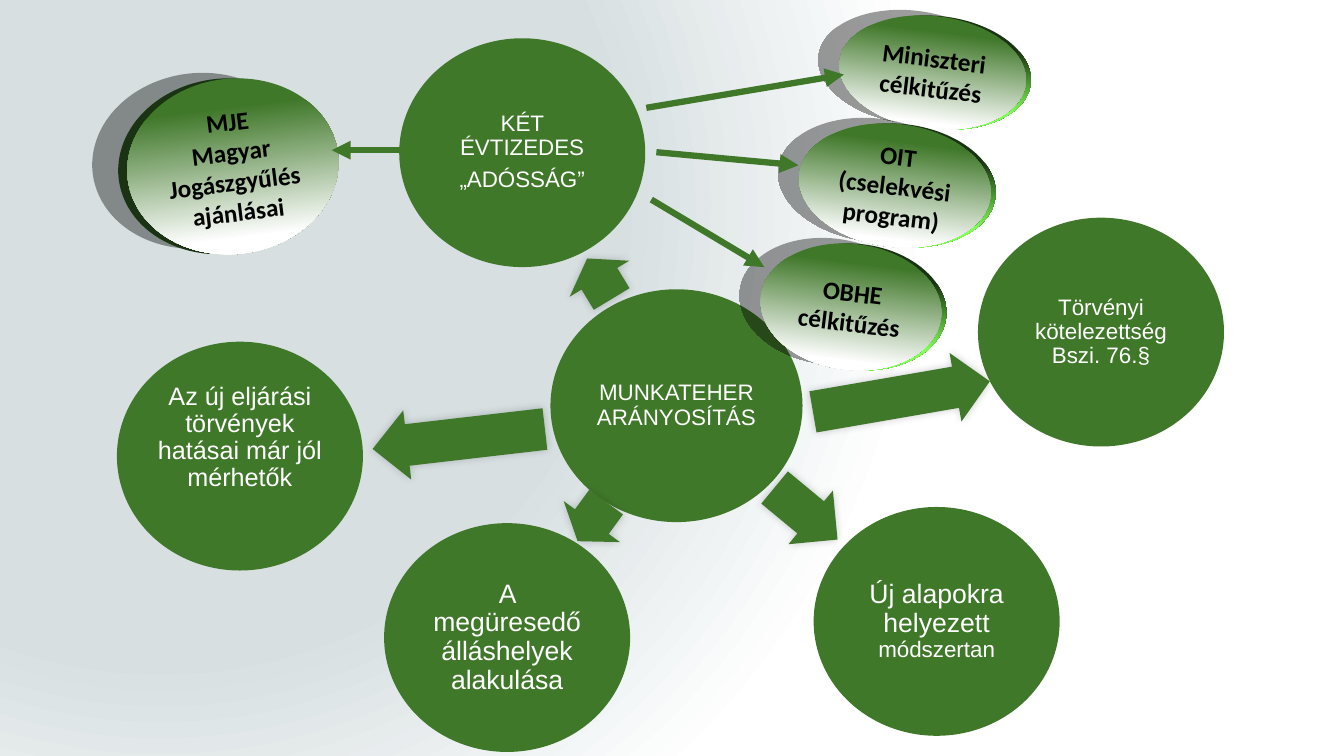
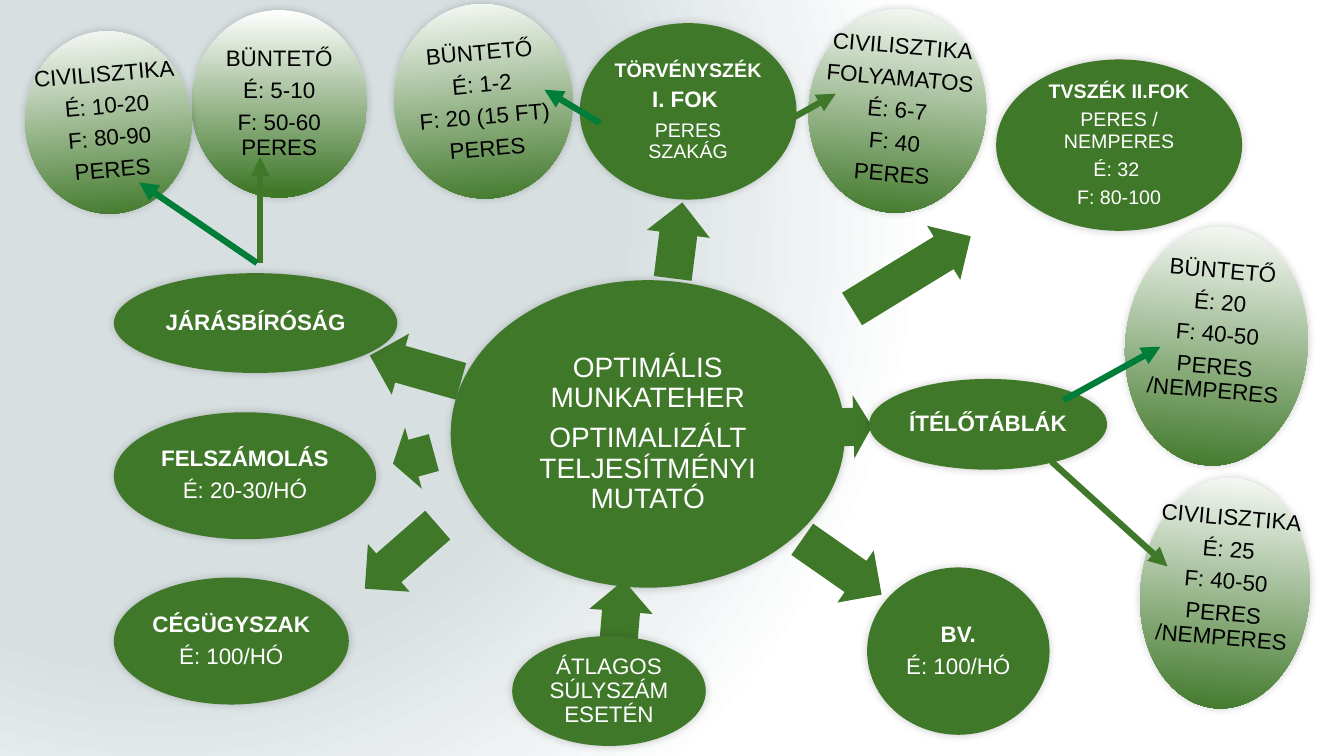
from pptx import Presentation
from pptx.dml.color import RGBColor
from pptx.enum.shapes import MSO_CONNECTOR, MSO_SHAPE
from pptx.enum.text import MSO_ANCHOR, PP_ALIGN
from pptx.oxml import parse_xml
from pptx.oxml.ns import nsdecls, qn
from pptx.util import Inches, Pt

ELLIPSE, ARROW = MSO_SHAPE.OVAL, MSO_SHAPE.RIGHT_ARROW
STRAIGHT = MSO_CONNECTOR.STRAIGHT
MIDDLE, CENTER = MSO_ANCHOR.MIDDLE, PP_ALIGN.CENTER

GREEN = RGBColor(0x40, 0x78, 0x2A)
TEAL = RGBColor(0x00, 0x7E, 0x39)
MIST = RGBColor(0xD7, 0xDF, 0xE1)
RIM_DARK = RGBColor(0x1A, 0x33, 0x12)
RIM_LIGHT = RGBColor(0x80, 0xFF, 0x55)
WHITE = RGBColor(0xFF, 0xFF, 0xFF)
BLACK = RGBColor(0, 0, 0)

SOFT_SHADOW = (20, 6, 0, 45)    # opacity %, blur pt, distance pt, direction
CAST_SHADOW = (38, 0, 19, 192)


def paint_gradient(fill, stops):
    fill.gradient()
    for stop, (position, color) in zip(fill.gradient_stops, stops):
        stop.position = position
        stop.color.rgb = color


def add_figure(slide, kind, box, fill, shadow=None, rotation=0, paragraphs=(),
               color=WHITE, font="Arial", wrap=True, bottom=0.02):
    """Draw a shape; fill is a colour or two stops, paragraphs are (text, size, bold)."""
    shape = slide.shapes.add_shape(kind, *(Inches(length) for length in box))
    shape.rotation = rotation
    shape.line.fill.background()
    if isinstance(fill, RGBColor):
        shape.fill.solid()
        shape.fill.fore_color.rgb = fill
    else:
        paint_gradient(shape.fill, fill)
        shape.fill.gradient_angle = 270
    shape.shadow.inherit = False
    if shadow:
        opacity, blur, distance, direction = shadow
        shape._element.spPr.find(qn("a:effectLst")).append(parse_xml(
            f'<a:outerShdw {nsdecls("a")} blurRad="{Pt(blur)}" dist="{Pt(distance)}" '
            f'dir="{direction * 60000}" algn="ctr" rotWithShape="0"><a:srgbClr val="000000">'
            f'<a:alpha val="{opacity * 1000}"/></a:srgbClr></a:outerShdw>'))
    frame = shape.text_frame
    frame.word_wrap = wrap
    frame.vertical_anchor = MIDDLE
    frame.margin_left = frame.margin_right = frame.margin_top = Inches(0.02)
    frame.margin_bottom = Inches(bottom)
    for index, (text, size, bold) in enumerate(paragraphs):
        paragraph = frame.add_paragraph() if index else frame.paragraphs[0]
        paragraph.text = text
        paragraph.alignment = CENTER
        if font == "Arial":
            paragraph.line_spacing = 0.9
            paragraph.space_after = Pt(round(size * 0.35, 1))
        paragraph.font.name = font
        paragraph.font.size = Pt(size)
        paragraph.font.bold = bold
        paragraph.font.color.rgb = color
    return shape


presentation = Presentation()
presentation.slide_width = Inches(13.33)
presentation.slide_height = Inches(7.5)

# Two slides on the same radial background
slides = []
for _ in range(2):
    slide = presentation.slides.add_slide(presentation.slide_layouts[6])
    paint_gradient(slide.background.fill, [(0.59, MIST), (1, WHITE)])
    linear = slide._element.find(".//" + qn("a:lin"))
    linear.getparent().replace(linear, parse_xml(
        f'<a:path {nsdecls("a")} path="circle">'
        '<a:fillToRect l="50000" t="55000" r="125000" b="100000"/></a:path>'))
    slides.append(slide)
workload, indicator = slides

# Slide 1: centre, block arrows and satellites
add_figure(workload, ELLIPSE, (5.46, 2.87, 2.5, 2.31), GREEN,
           paragraphs=[("MUNKATEHER ARÁNYOSÍTÁS", 16, False)])
for left, top, width, rotation in [
    (8.05, 3.59, 1.78, 350.2), (7.59, 4.75, 0.81, 39.6), (5.63, 4.83, 0.48, 126.1),
    (3.69, 4.01, 1.72, 173.4), (5.71, 2.42, 0.47, 238.8),
]:
    arrow = add_figure(workload, ARROW, (left, top, width, 0.69), GREEN, SOFT_SHADOW, rotation)
    arrow.adjustments[0] = 0.6
satellites = [
    (9.7, 2.16, 0.02, [("Törvényi kötelezettség Bszi. 76.§", 16, False)]),
    (3.81, 5.19, 0.02, [("A megüresedő álláshelyek alakulása", 19, False)]),
    (1.16, 3.39, 0.38, [("Az új eljárási törvények hatásai már jól mérhetők", 18, False)]),
    (3.96, 0.38, 0.02, [("KÉT ÉVTIZEDES", 16, False), ("„ADÓSSÁG”", 16, False)]),
    (8.07, 5.03, 0.02, [("Új alapokra helyezett ", 19, False)]),
]
for left, top, bottom, paragraphs in satellites:
    satellite = add_figure(workload, ELLIPSE, (left, top, 2.44, 2.27), GREEN,
                           paragraphs=paragraphs, bottom=bottom)
method_run = satellite.text_frame.paragraphs[0].add_run()
method_run.text = "módszertan"
method_run.font.size = Pt(16)

# Slide 1: tilted discs with a rim and a cast shadow
for left, top, width, height, rim_shift, rotation, lines in [
    (8.32, 0.16, 1.86, 1.12, 0.05, 7, ["Miniszteri célkitűzés"]),
    (7.92, 1.23, 1.91, 1.22, 0.05, 7, ["OIT", "(cselekvési program)"]),
    (7.54, 2.42, 1.8, 1.25, 0.05, 7, ["OBHE célkitűzés"]),
    (1.26, 0.78, 2.1, 1.74, -0.09, -7, ["MJE", "Magyar Jogászgyűlés ajánlásai"]),
]:
    add_figure(workload, ELLIPSE, (left + rim_shift, top, width, height),
               [(0.3, RIM_DARK), (0.7, RIM_LIGHT if rim_shift > 0 else RIM_DARK)],
               CAST_SHADOW, rotation)
    add_figure(workload, ELLIPSE, (left, top, width, height), [(0.24, GREEN), (0.82, WHITE)],
               rotation=rotation, color=BLACK, font="Calibri",
               paragraphs=[(line, 18, True) for line in lines])

# Slide 2: centre and block arrows
add_figure(indicator, ELLIPSE, (4.47, 2.78, 3.91, 3.05), GREEN, SOFT_SHADOW,
           paragraphs=[("OPTIMÁLIS MUNKATEHER", 20, False),
                       ("OPTIMALIZÁLT TELJESÍTMÉNYI MUTATÓ", 20, False)])
for left, top, width, rotation in [
    (6.34, 2.07, 0.76, 277.2), (8.35, 2.39, 1.38, 328.5), (8.28, 3.92, 0.37, 358.4),
    (7.87, 5.31, 0.96, 34.9), (5.85, 5.75, 0.62, 274.8), (3.5, 5.21, 0.96, 138.9),
    (3.89, 4.23, 0.42, 164.7), (3.65, 3.34, 0.94, 195.8),
]:
    arrow = add_figure(indicator, ARROW, (left, top, width, 0.63), GREEN, rotation=rotation)
    arrow.adjustments[0] = 0.6

# Slide 2: courts and case types
for box, paragraphs in [
    ((5.75, 0.23, 2.15, 1.75), [("TÖRVÉNYSZÉK", 14, True), ("I. FOK ", 16, True),
                                ("PERES SZAKÁG", 14, False)]),
    ((9.88, 0.59, 2.44, 1.7), [("TVSZÉK II.FOK", 14, True), ("PERES / NEMPERES", 14, False),
                               ("É: 32 ", 14, False), ("F: 80-100", 14, False)]),
    ((8.62, 3.76, 2.36, 0.9), [("ÍTÉLŐTÁBLÁK", 16, True)]),
    ((8.6, 5.63, 1.81, 1.66), [("BV.", 16, True), ("É: 100/HÓ", 16, False)]),
    ((5.08, 6.31, 1.92, 1.09), [("ÁTLAGOS SÚLYSZÁM ESETÉN", 16, False)]),
    ((1.13, 5.73, 2.33, 1.26), [("CÉGÜGYSZAK", 16, True), ("É: 100/HÓ", 16, False)]),
    ((1.13, 4.09, 2.6, 1.26), [("FELSZÁMOLÁS", 16, True), ("É: 20-30/HÓ", 16, False)]),
    ((1.13, 2.71, 2.81, 0.99), [("JÁRÁSBÍRÓSÁG", 16, True)]),
]:
    add_figure(indicator, ELLIPSE, box, GREEN, SOFT_SHADOW, paragraphs=paragraphs)

# Slide 2: tilted discs with the figures
for box, rotation, bottom, lines in [
    ((11.16, 2.25, 1.81, 2.37), 5, 0.32, ["BÜNTETŐ", "É: 20", "F: 40-50", "PERES\v/NEMPERES"]),
    ((11.31, 4.74, 1.68, 2.29), 5, 0.32,
     ["CIVILISZTIKA", "É: 25", "F: 40-50", "PERES\v/NEMPERES"]),
    ((3.91, 0.04, 1.77, 1.93), -5, 0.02, ["BÜNTETŐ", "É: 1-2", "F: 20 (15 FT)", "PERES"]),
    ((8.02, 0.09, 1.76, 2.02), 5, 0.02,
     ["CIVILISZTIKA", "FOLYAMATOS", "É: 6-7", "F: 40", "PERES"]),
    ((1.9, 0.1, 1.74, 1.86), 0, 0.02, ["BÜNTETŐ", "É: 5-10", "F: 50-60\vPERES"]),
    ((0.25, 0.31, 1.65, 1.81), -5, 0.02, ["CIVILISZTIKA", "É: 10-20", "F: 80-90", "PERES"]),
]:
    add_figure(indicator, ELLIPSE, box, [(0, WHITE), (0.97, GREEN)], SOFT_SHADOW, rotation,
               [(line, 16, False) for line in lines], BLACK, wrap=False, bottom=bottom)

# Thin arrows on both slides
for slide, color, ends in [
    (workload, GREEN, (6.41, 1.07, 8.37, 0.74)),
    (workload, GREEN, (6.51, 1.51, 7.92, 1.64)),
    (workload, GREEN, (6.46, 1.98, 7.58, 2.65)),
    (workload, GREEN, (4.02, 1.49, 3.29, 1.49)),
    (indicator, TEAL, (10.55, 3.97, 11.51, 3.44)),
    (indicator, GREEN, (10.43, 4.58, 11.58, 5.62)),
    (indicator, GREEN, (7.88, 1.16, 8.29, 0.93)),
    (indicator, TEAL, (5.95, 1.22, 5.4, 0.89)),
    (indicator, GREEN, (2.58, 2.61, 2.58, 1.56)),
    (indicator, TEAL, (2.55, 2.61, 1.38, 1.81)),
]:
    connector = slide.shapes.add_connector(STRAIGHT, *(Inches(length) for length in ends))
    connector.line.color.rgb = color
    connector.line.width = Pt(4.5)
    connector.line._get_or_add_ln().append(
        parse_xml(f'<a:tailEnd {nsdecls("a")} type="triangle"/>'))
    connector._element.spPr.append(parse_xml(f'<a:effectLst {nsdecls("a")}/>'))

presentation.save("out.pptx")
